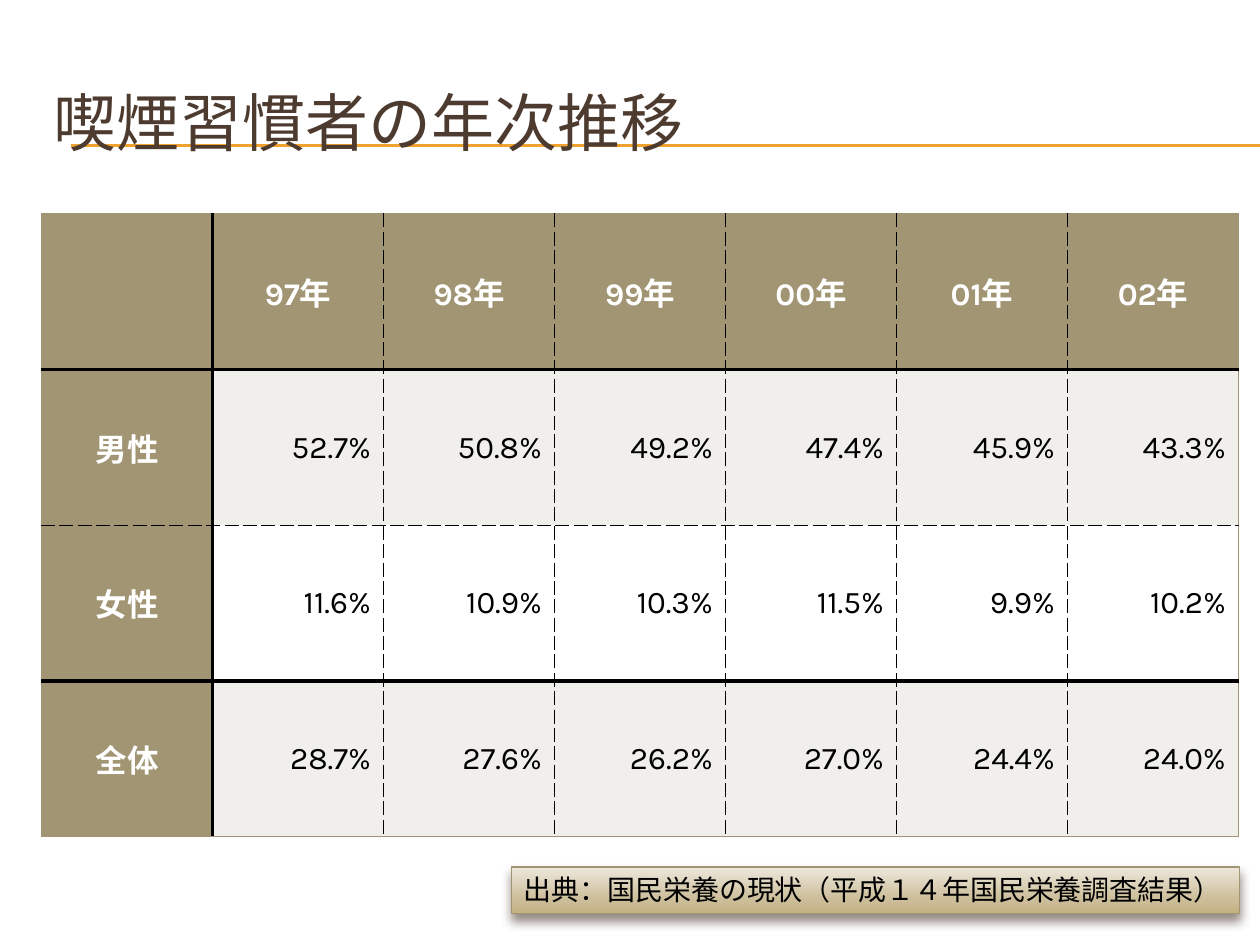
from lxml import etree
from pptx import Presentation, util as u
from pptx.dml.color import RGBColor
from pptx.enum import shapes, text
from pptx.oxml import parse_xml
from pptx.oxml.ns import nsdecls, qn

# Content
TITLE = "喫煙習慣者の年次推移"
YEARS = ["97年", "98年", "99年", "00年", "01年", "02年"]
RATES = [
    ("男性", ["52.7%", "50.8%", "49.2%", "47.4%", "45.9%", "43.3%"]),
    ("女性", ["11.6%", "10.9%", "10.3%", "11.5%", "9.9%", "10.2%"]),
    ("全体", ["28.7%", "27.6%", "26.2%", "27.0%", "24.4%", "24.0%"]),
]
SOURCE = "出典：国民栄養の現状（平成１４年国民栄養調査結果）"

THEME = {
    "font": "Karla", "title": "4E3B30", "rule": "F0A22E", "khaki": "A19574",
    "band": "F0EFEB", "white": "FFFFFF", "black": "000000",
    "grad": [(0, "EDE8DC"), (72, "CCBD99"), (100, "C4B284")],
    "big": 36, "cell": 18, "note": 16,
}
# Cell edges: colour, width in points, dash
RIM = (THEME["khaki"], 1, "solid")
THICK = (THEME["black"], 2.25, "solid")
DASH = (THEME["black"], 1, "dash")


def rgb(name):
    return RGBColor.from_string(THEME[name])


def write(frame, words, size, color, align=text.PP_ALIGN.LEFT, bold=False):
    frame.word_wrap = True
    para = frame.paragraphs[0]
    para.alignment = align
    run = para.add_run()
    run.text = words
    font = run.font
    font.name, font.size, font.bold = THEME["font"], u.Pt(THEME[size]), bold
    font.color.rgb = rgb(color)


def edge(cell, sides):
    props = cell._tc.get_or_add_tcPr()
    for spot, (side, (color, width, dash)) in enumerate(zip("LRTB", sides)):
        props.insert(spot, parse_xml(
            f'<a:ln{side} {nsdecls("a")} w="{u.Pt(width)}"><a:solidFill>'
            f'<a:srgbClr val="{color}"/></a:solidFill>'
            f'<a:prstDash val="{dash}"/></a:ln{side}>'))


prs = Presentation()
prs.slide_width, prs.slide_height = u.Inches(10), u.Inches(7.5)
slide = prs.slides.add_slide(prs.slide_layouts[6])

# Double rule under the title
for y in (1.15, 1.16):
    line = slide.shapes.add_connector(
        shapes.MSO_CONNECTOR.STRAIGHT,
        u.Inches(0.56), u.Inches(y), u.Inches(10), u.Inches(y))
    line.line.color.rgb, line.line.width = rgb("rule"), u.Pt(0.75)
    etree.SubElement(line._element.spPr, qn("a:effectLst"))

# Title
box = slide.shapes.add_textbox(
    u.Inches(0.33), u.Inches(0.5), u.Inches(9.5), u.Inches(0.92))
box.text_frame.vertical_anchor = text.MSO_ANCHOR.MIDDLE
write(box.text_frame, TITLE, "big", "title")

# Table of smoking rates
rows = [["", *YEARS]] + [[name, *vals] for name, vals in RATES]
table = slide.shapes.add_table(
    len(rows), len(rows[0]), u.Inches(0.33), u.Inches(1.7),
    u.Inches(9.5), u.Inches(4.94)).table
cols = [RIM, THICK] + [DASH] * (len(YEARS) - 1) + [RIM]
bars = [RIM, THICK, DASH, THICK, RIM]
for r, row in enumerate(rows):
    for c, words in enumerate(row):
        cell = table.cell(r, c)
        head = r == 0 or c == 0
        cell.fill.solid()
        cell.fill.fore_color.rgb = rgb(
            "khaki" if head else "band" if r % 2 else "white")
        cell.vertical_anchor = text.MSO_ANCHOR.MIDDLE
        edge(cell, (cols[c], cols[c + 1], bars[r], bars[r + 1]))
        if words:
            align = text.PP_ALIGN.CENTER if head else text.PP_ALIGN.RIGHT
            write(cell.text_frame, words, "cell",
                  "white" if head else "black", align, head)

# Source note with gradient and soft shadow
note = slide.shapes.add_shape(
    shapes.MSO_SHAPE.RECTANGLE,
    u.Inches(4.06), u.Inches(6.88), u.Inches(5.78), u.Inches(0.37))
note.line.color.rgb, note.line.width = rgb("khaki"), u.Pt(0.79)
note.shadow.inherit = False
stops = "".join(f'<a:gs pos="{pos * 1000}"><a:srgbClr val="{color}"/></a:gs>'
                for pos, color in THEME["grad"])
props = note._element.spPr
props.find(qn("a:prstGeom")).addnext(parse_xml(
    f'<a:gradFill {nsdecls("a")} rotWithShape="1"><a:gsLst>{stops}</a:gsLst>'
    '<a:lin ang="5400000" scaled="0"/></a:gradFill>'))
props.find(qn("a:effectLst")).append(parse_xml(
    f'<a:outerShdw {nsdecls("a")} blurRad="{u.Pt(6)}" dist="{u.Pt(4)}" '
    f'dir="5400000" rotWithShape="0"><a:srgbClr val="{THEME["title"]}">'
    '<a:alpha val="60000"/></a:srgbClr></a:outerShdw>'))
write(note.text_frame, SOURCE, "note", "black")
note.text_frame.auto_size = text.MSO_AUTO_SIZE.SHAPE_TO_FIT_TEXT
note.text_frame.vertical_anchor = text.MSO_ANCHOR.TOP

prs.save("out.pptx")
